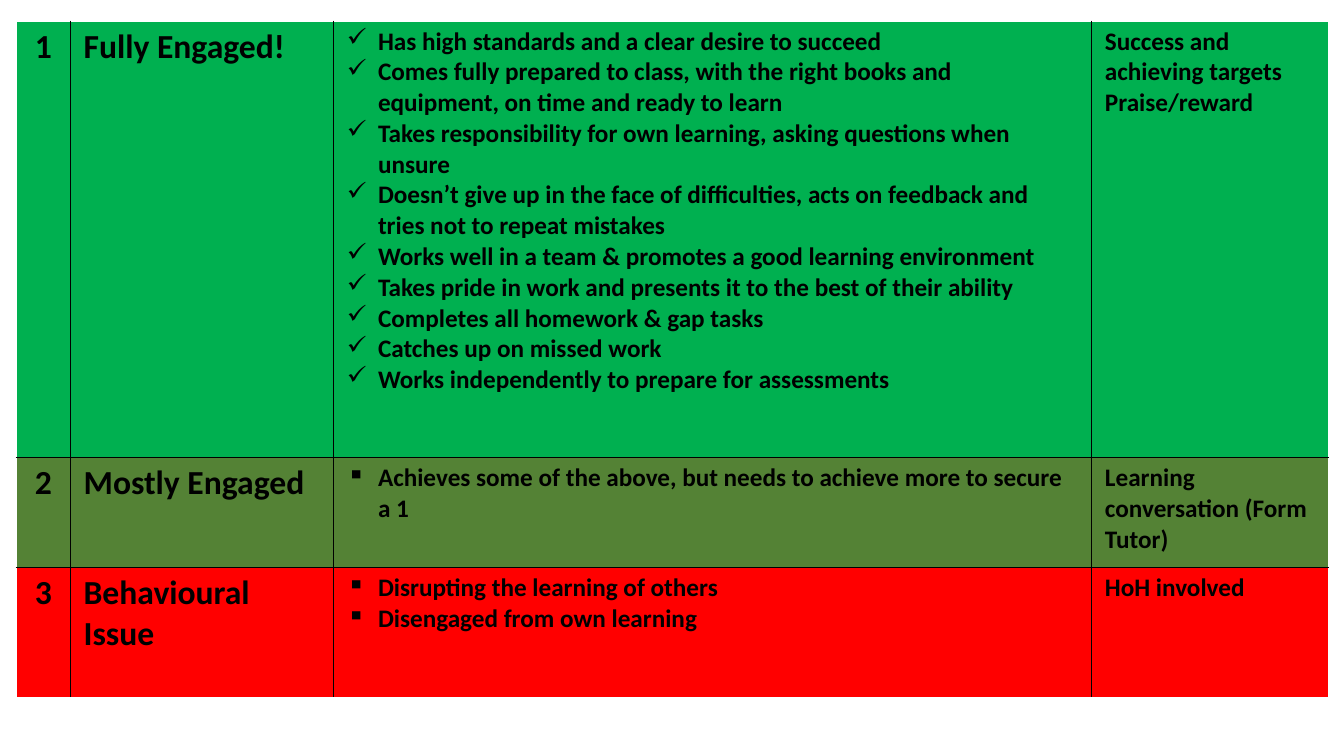
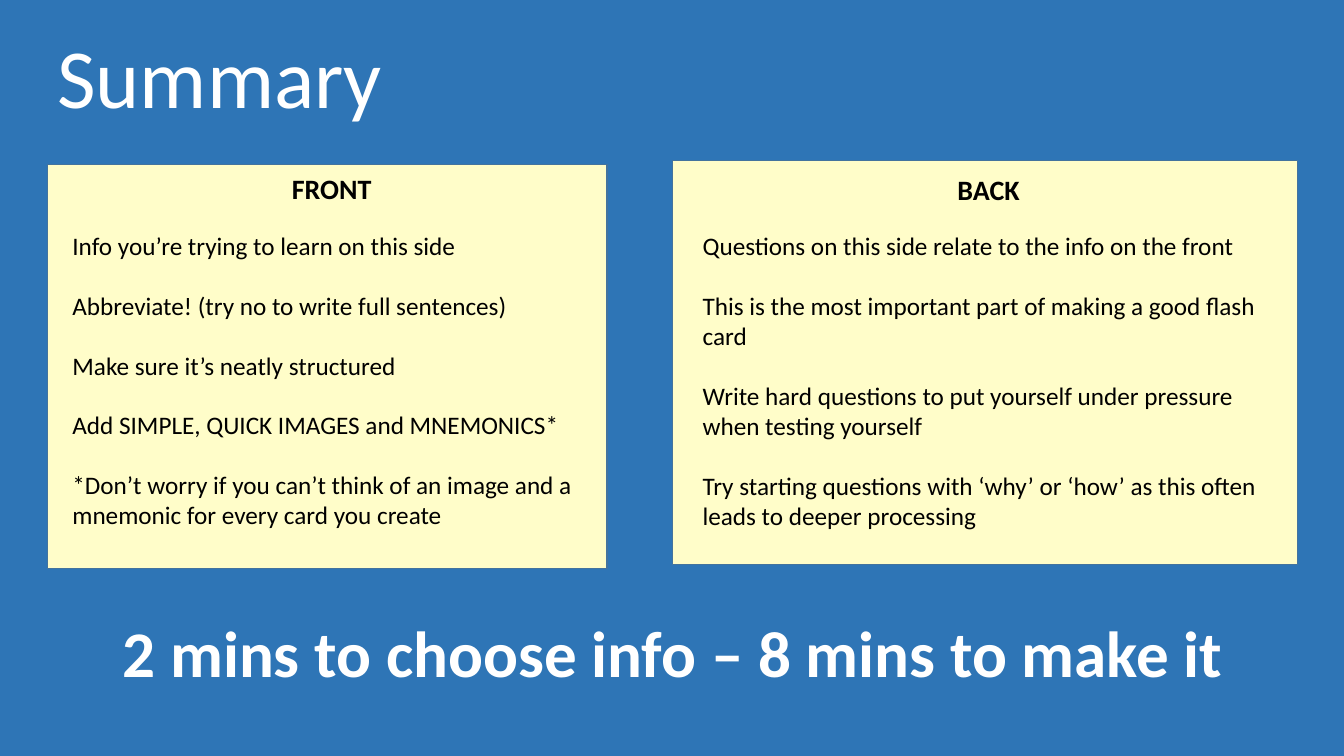
from dataclasses import dataclass

from lxml.etree import SubElement
from pptx import Presentation
from pptx.dml.color import RGBColor
from pptx.enum.shapes import MSO_SHAPE
from pptx.enum.text import MSO_ANCHOR, PP_ALIGN
from pptx.oxml import parse_xml
from pptx.oxml.ns import nsdecls, qn
from pptx.util import Inches, Pt


@dataclass(frozen=True)
class Theme:
    """Colours, font and type sizes shared by the slides."""

    font: str = "Calibri"
    ink: str = "000000"
    light: str = "FFFFFF"
    blue: str = "2E75B6"
    card: str = "FFFDC9"
    card_line: str = "43739E"
    engaged: str = "00B050"
    mostly: str = "548235"
    issue: str = "FF0000"
    title: float = 60
    banner: float = 46.5
    level: float = 24
    heading: float = 20
    body: float = 18


@dataclass(frozen=True)
class Level:
    """One row of the engagement table."""

    number: str
    name: str
    behaviours: list
    response: list
    bullet: str
    colour: str
    height: float


@dataclass(frozen=True)
class Card:
    """One side of a flash card, with its box and text positions."""

    heading: str
    lines: list
    box: tuple
    heading_box: tuple
    body_box: tuple


THEME = Theme()
COLUMN_WIDTHS = [0.54, 2.61, 7.52, 2.35]

LEVELS = [
    Level("1", "Fully Engaged!", [
        "Has high standards and a clear desire to succeed",
        "Comes fully prepared to class, with the right books and equipment, on time and ready to learn",
        "Takes responsibility for own learning, asking questions when unsure",
        "Doesn’t give up in the face of difficulties, acts on feedback and tries not to repeat mistakes",
        "Works well in a team & promotes a good learning environment",
        "Takes pride in work and presents it to the best of their ability",
        "Completes all homework & gap tasks",
        "Catches up on missed work",
        "Works independently to prepare for assessments",
    ], ["Success and achieving targets", "Praise/reward"], "✓", THEME.engaged, 4.33),
    Level("2", "Mostly Engaged", [
        "Achieves some of the above, but needs to achieve more to secure a 1",
    ], ["Learning conversation (Form Tutor)"], "▪", THEME.mostly, 1.09),
    Level("3", "Behavioural Issue", [
        "Disrupting the learning of others",
        "Disengaged from own learning",
    ], ["HoH involved"], "▪", THEME.issue, 1.29),
]

CARDS = [
    Card("FRONT", [
        "Info you’re trying to learn on this side",
        "Abbreviate! (try no to write full sentences)",
        "Make sure it’s neatly structured",
        "Add SIMPLE, QUICK IMAGES and MNEMONICS*",
        "*Don’t worry if you can’t think of an image and a mnemonic for every card you create",
    ], (0.47, 1.63, 5.55, 4.01), (2.79, 1.65, 1, 0.44), (0.62, 2.24, 5.4, 3.4)),
    Card("BACK", [
        "Questions on this side relate to the info on the front",
        "This is the most important part of making a good flash card",
        "Write hard questions to put yourself under pressure when testing yourself",
        "Try starting questions with ‘why’ or ‘how’ as this often leads to deeper processing",
    ], (6.67, 1.59, 6.2, 4.01), (9.39, 1.66, 0.83, 0.44), (6.87, 2.24, 5.72, 3.36)),
]


def add_slide(presentation, colour):
    """Add a blank slide with a plain background."""
    slide = presentation.slides.add_slide(presentation.slide_layouts[6])
    slide.background.fill.solid()
    slide.background.fill.fore_color.rgb = RGBColor.from_string(colour)
    return slide


def add_bullet(paragraph, character):
    """Give a paragraph a hanging bullet."""
    properties = paragraph._p.get_or_add_pPr()
    properties.set("marL", str(Inches(0.31)))
    properties.set("indent", str(Inches(-0.31)))
    SubElement(properties, qn("a:buChar")).set("char", character)


def write(text_frame, lines, size, colour=THEME.ink, bold=False,
          align=PP_ALIGN.LEFT, spacing=None, gap=0, bullet=None):
    """Write and format one paragraph per line."""
    text_frame.text = "\n".join(lines)
    for index, paragraph in enumerate(text_frame.paragraphs):
        paragraph.alignment = align
        if spacing:
            paragraph.line_spacing = spacing
        if index and gap:
            paragraph.space_before = Pt(gap)
        if bullet:
            add_bullet(paragraph, bullet)
        for run in paragraph.runs:
            run.font.name = THEME.font
            run.font.size = Pt(size)
            run.font.bold = bold
            run.font.color.rgb = RGBColor.from_string(colour)


def add_text(slide, box, lines, size, wrap=True, anchor=MSO_ANCHOR.TOP, **style):
    """Add a text box."""
    shape = slide.shapes.add_textbox(*map(Inches, box))
    shape.text_frame.word_wrap = wrap
    shape.text_frame.vertical_anchor = anchor
    write(shape.text_frame, lines, size, **style)


def add_borders(cell, sides):
    """Draw thin lines on the given sides of a cell."""
    properties = cell._tc.get_or_add_tcPr()
    for position, side in enumerate(sides):
        properties.insert(position, parse_xml(
            f'<a:ln{side} {nsdecls("a")} w="12700"><a:solidFill>'
            f'<a:srgbClr val="{THEME.ink}"/></a:solidFill></a:ln{side}>'))


def fill_cell(cell, lines, size, colour, **style):
    """Fill a table cell with colour and bold text."""
    cell.fill.solid()
    cell.fill.fore_color.rgb = RGBColor.from_string(colour)
    cell.margin_left = cell.margin_right = Inches(0.13)
    cell.margin_top = cell.margin_bottom = Inches(0.05)
    write(cell.text_frame, lines, size, bold=True, **style)


def add_level_table(slide, levels):
    """Add the engagement table with lines between its cells."""
    table = slide.shapes.add_table(
        len(levels), len(COLUMN_WIDTHS), Inches(0.16), Inches(0.21),
        Inches(sum(COLUMN_WIDTHS)), Inches(sum(level.height for level in levels))).table
    table.first_row = table.horz_banding = False
    for column, width in zip(table.columns, COLUMN_WIDTHS):
        column.width = Inches(width)
    last_row, last_column = len(levels) - 1, len(COLUMN_WIDTHS) - 1
    for row, level in enumerate(levels):
        table.rows[row].height = Inches(level.height)
        contents = [
            ([level.number], THEME.level, {"align": PP_ALIGN.CENTER}),
            ([level.name], THEME.level, {}),
            (level.behaviours, THEME.body, {"bullet": level.bullet}),
            (level.response, THEME.body, {}),
        ]
        for column, (lines, size, style) in enumerate(contents):
            cell = table.cell(row, column)
            fill_cell(cell, lines, size, level.colour, **style)
            inner = {"L": column > 0, "R": column < last_column,
                     "T": row > 0, "B": row < last_row}
            add_borders(cell, [side for side, shown in inner.items() if shown])


def add_card(slide, card):
    """Add a flash card with its heading and spaced lines."""
    shape = slide.shapes.add_shape(MSO_SHAPE.RECTANGLE, *map(Inches, card.box))
    shape.shadow.inherit = False
    shape.fill.solid()
    shape.fill.fore_color.rgb = RGBColor.from_string(THEME.card)
    shape.line.color.rgb = RGBColor.from_string(THEME.card_line)
    shape.line.width = Pt(1)
    add_text(slide, card.heading_box, [card.heading], THEME.heading,
             wrap=False, bold=True, align=PP_ALIGN.CENTER)
    add_text(slide, card.body_box, card.lines, THEME.body, gap=21)


def main():
    """Build and save the presentation."""
    presentation = Presentation()
    presentation.slide_width, presentation.slide_height = Inches(13.33), Inches(7.5)

    add_level_table(add_slide(presentation, THEME.light), LEVELS)

    summary = add_slide(presentation, THEME.blue)
    add_text(summary, (0.47, 0.22, 10, 1.09), ["Summary"], THEME.title,
             anchor=MSO_ANCHOR.BOTTOM, colour=THEME.light, spacing=0.9)
    for card in CARDS:
        add_card(summary, card)
    add_text(summary, (0.62, 5.79, 12.1, 1.09), ["2 mins to choose info – 8 mins to make it"],
             THEME.banner, anchor=MSO_ANCHOR.BOTTOM, colour=THEME.light, bold=True,
             align=PP_ALIGN.CENTER, spacing=0.7)

    presentation.save("out.pptx")


if __name__ == "__main__":
    main()
